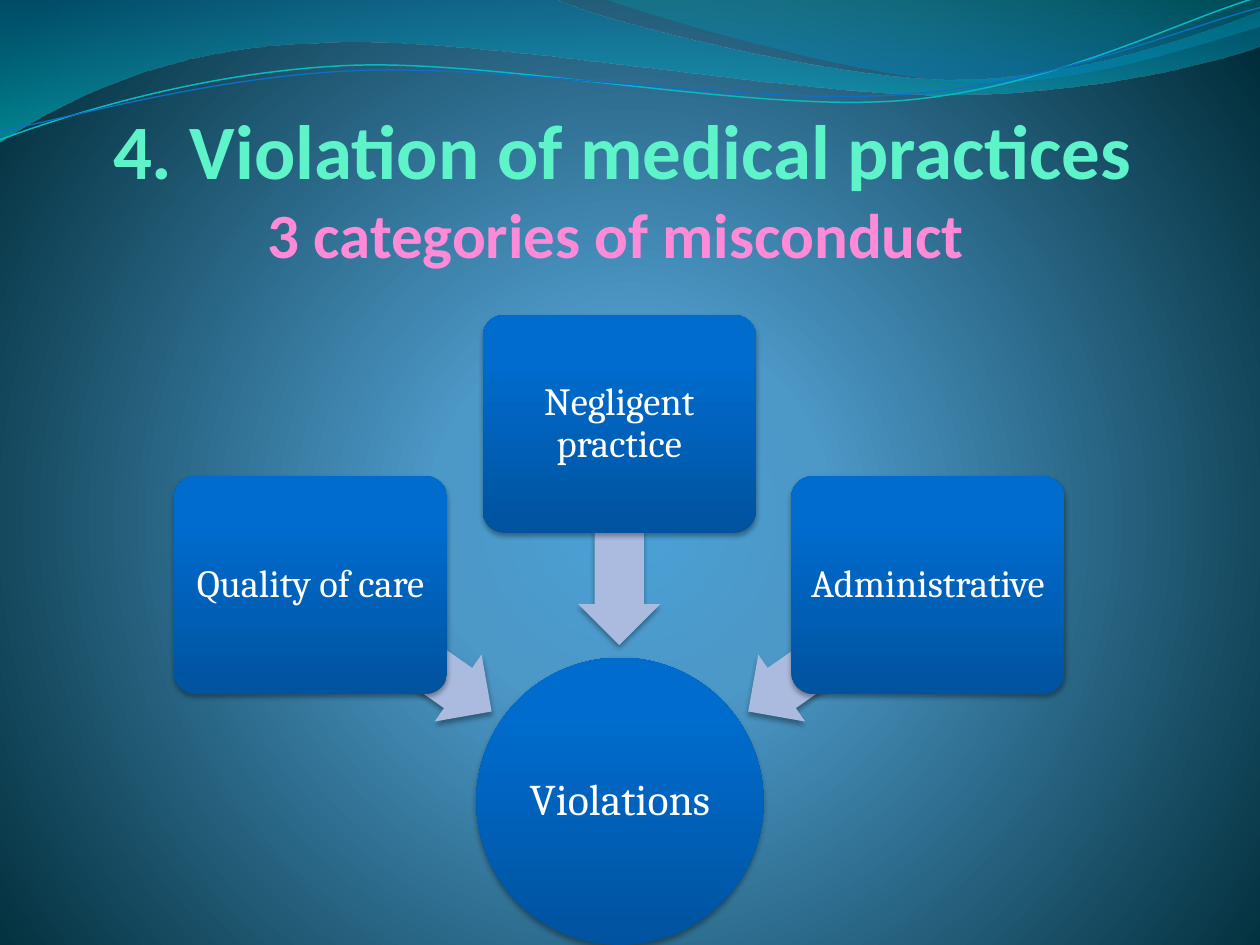
import math

import pptx
import pptx.util
import pptx.dml.color
import pptx.enum.shapes
import pptx.enum.text
import pptx.oxml
import pptx.oxml.ns

Inch = pptx.util.Inches
Pt = pptx.util.Pt
Kind = pptx.enum.shapes.MSO_SHAPE
Align = pptx.enum.text.PP_ALIGN
Anchor = pptx.enum.text.MSO_ANCHOR
qn = pptx.oxml.ns.qn
NS = pptx.oxml.ns.nsdecls("a")

WIDE, HIGH = 10, 7.5
TILT = 357.3
BLUE = [(0, "00539F", 100), (80, "006CCE", 100), (100, "006DCF", 100)]
UP, DOWN = ('<a:lin ang="%d" scaled="0"/>' % (deg * 60000) for deg in (270, 90))
GLOW = ('<a:path path="circle"><a:fillToRect l="10000" t="110000" '
        'r="10000" b="100000"/></a:path>')

# Each wave: start point, then cubic (6 numbers) or straight (2 numbers) steps
BAND = [(0, 0), (4.4, -0.01), (4.76, 0.17, 6.64, 0.63, 7.58, 0.63),
        (8.53, 0.63, 9.58, 0.26, 10, 0.09), (10.01, 0.36),
        (9.83, 0.44, 8.7, 0.76, 7.46, 0.75), (6.22, 0.75, 3.82, 0.28, 2.57, 0.34),
        (1.29, 0.36, 0.46, 0.83, -0.01, 1.13), (0, 0)]
CREST = [(4.79, -0.01), (5.09, 0.11, 6.82, 0.62, 7.69, 0.65),
         (8.56, 0.69, 9.61, 0.32, 10, 0.21), (10, 0), (4.79, -0.01)]
TEAL = [(0, 1.11), (0.48, 0.93, 1.58, 0.57, 2.77, 0.52),
        (3.95, 0.47, 5.93, 0.89, 7.13, 0.8), (8.33, 0.71, 9.38, 0.15, 9.98, -0.02)]
AZURE = [(0, 1.04), (0.47, 0.96, 1.64, 0.61, 2.83, 0.56),
         (4.03, 0.51, 5.97, 0.84, 7.17, 0.75), (8.36, 0.67, 9.41, 0.21, 10, 0.06)]


def color(text):
    return pptx.dml.color.RGBColor.from_string(text)


def place(shape, box):
    shape.left, shape.top, shape.width, shape.height = map(Inch, box)


def blend(fill, root, stops, way):
    """Give the first gradient under root these (place, colour, opacity) stops."""
    fill.gradient()
    grad = root.find(".//" + qn("a:gradFill"))
    for child in list(grad):
        grad.remove(child)
    marks = "".join(
        f'<a:gs pos="{pos * 1000}"><a:srgbClr val="{tone}">'
        f'<a:alpha val="{alpha * 1000}"/></a:srgbClr></a:gs>'
        for pos, tone, alpha in stops)
    grad.append(pptx.oxml.parse_xml(f"<a:gsLst {NS}>{marks}</a:gsLst>"))
    grad.append(pptx.oxml.parse_xml(way.replace(" ", f" {NS} ", 1)))


def shade(shape):
    shape.shadow.inherit = False
    shape.element.spPr.find(qn("a:effectLst")).append(pptx.oxml.parse_xml(
        f'<a:outerShdw {NS} blurRad="{Pt(3.1)}" dist="{Pt(1.8)}" dir="5400000" '
        'rotWithShape="0"><a:srgbClr val="000000"><a:alpha val="35000"/>'
        '</a:srgbClr></a:outerShdw>'))


def local(x, y, box, turn):
    """Undo the turn about the box's middle and measure from its corner."""
    left, top, width, height = box
    rad = math.radians(-turn)
    dx, dy = x - left - width / 2, y - top - height / 2
    return (Inch(dx * math.cos(rad) - dy * math.sin(rad) + width / 2),
            Inch(dx * math.sin(rad) + dy * math.cos(rad) + height / 2))


def wave(slide, steps, box, closed, turn=0):
    """Build a freeform, then bend its segments into cubic curves."""
    ends = [(Inch(step[-2]), Inch(step[-1])) for step in steps]
    pen = slide.shapes.build_freeform(*ends[0])
    pen.add_line_segments(ends[1:], close=closed)
    shape = pen.convert_to_shape()
    place(shape, box)
    shape.rotation = turn
    shape.shadow.inherit = False
    track = shape.element.find(".//" + qn("a:path"))
    track.set("w", str(shape.width))
    track.set("h", str(shape.height))
    for child in list(track):
        track.remove(child)
    for i, step in enumerate(steps):
        tag = "moveTo" if i == 0 else "lnTo" if len(step) == 2 else "cubicBezTo"
        spots = [local(x, y, box, turn) for x, y in zip(step[::2], step[1::2])]
        marks = "".join(f'<a:pt x="{x}" y="{y}"/>' for x, y in spots)
        track.append(pptx.oxml.parse_xml(f"<a:{tag} {NS}>{marks}</a:{tag}>"))
    if closed:
        track.append(pptx.oxml.parse_xml(f"<a:close {NS}/>"))
    return shape


def sheet(slide, steps, box, stops):
    shape = wave(slide, steps, box, True)
    blend(shape.fill, shape.element, stops, DOWN)
    shape.line.fill.background()


def thread(slide, steps, box, tone, width):
    shape = wave(slide, steps, box, False, TILT)
    shape.fill.background()
    shape.line.color.rgb = color(tone)
    shape.line.width = Pt(width)


def write(para, text, size, face, tone, bold=False):
    run = para.add_run()
    run.text = text
    run.font.size, run.font.name, run.font.bold = Pt(size), face, bold
    run.font.color.rgb = color(tone)


def pad(frame, *sides):
    (frame.margin_left, frame.margin_top,
     frame.margin_right, frame.margin_bottom) = map(Inch, sides)


def head(slide):
    title = slide.shapes.title
    place(title, (0.33, 0.58, 9.25, 2.5))
    frame = title.text_frame
    frame.auto_size = pptx.enum.text.MSO_AUTO_SIZE.NONE
    frame.vertical_anchor = Anchor.BOTTOM
    pad(frame, 0, 0, 0.02, 0.93)
    para = frame.paragraphs[0]
    para.alignment = Align.CENTER
    write(para, "4. Violation of medical practices", 44, "Calibri", "5FF3CA", True)
    para.add_line_break()
    write(para, "3 categories of misconduct ", 36, "Calibri", "FF8AD8", True)


def node(slide, kind, box, text, size, inset):
    shape = slide.shapes.add_shape(kind, *map(Inch, box))
    if kind == Kind.ROUNDED_RECTANGLE:
        shape.adjustments[0] = 0.1
    blend(shape.fill, shape.element, BLUE, UP)
    shape.line.fill.background()
    shade(shape)
    frame = shape.text_frame
    frame.word_wrap = True
    frame.vertical_anchor = Anchor.MIDDLE
    pad(frame, *[inset] * 4)
    para = frame.paragraphs[0]
    para.alignment = Align.CENTER
    para.line_spacing = 0.9
    write(para, text, size, "Cambria", "FFFFFF")


def arrow(slide, left, top, turn):
    shape = slide.shapes.add_shape(
        Kind.LEFT_ARROW, *map(Inch, (left, top, 1.75, 0.65)))
    shape.adjustments[0], shape.adjustments[1] = 0.6, 0.5
    shape.rotation = turn
    shape.fill.solid()
    shape.fill.fore_color.rgb = color("ABBBDF")
    shape.line.fill.background()
    shade(shape)


def main():
    deck = pptx.Presentation()
    deck.slide_width, deck.slide_height = Inch(WIDE), Inch(HIGH)
    slide = deck.slides.add_slide(deck.slide_layouts[0])
    sub = slide.placeholders[1].element
    sub.getparent().remove(sub)

    blend(slide.background.fill, slide.element,
          [(0, "4AA0D6", 100), (25, "4C98C7", 100), (100, "002C38", 100)], GLOW)
    sheet(slide, BAND, (-0.01, -0.01, 10.02, 1.14),
          [(0, "0074A1", 45), (100, "00C6CF", 55)])
    sheet(slide, CREST, (4.79, -0.01, 5.21, 0.7),
          [(0, "00A1A9", 30), (80, "008BBF", 45)])
    thread(slide, TEAL, (-0.02, 0.22, 10.02, 0.71), "0AB8BF", 0.85)
    thread(slide, AZURE, (-0.02, 0.3, 10.03, 0.58), "0F6FC6", 0.75)
    head(slide)

    node(slide, Kind.OVAL, (3.78, 5.22, 2.28, 2.28), "Violations", 25, 0.02)
    causes = [("Quality of care", 3.78, 2.31, 4.82, 215),
              ("Negligent practice", 2.5, 4.04, 3.92, 270),
              ("Administrative", 3.78, 5.78, 4.82, 325)]
    for i, (text, top, left, high, turn) in enumerate(causes):
        arrow(slide, left, high, turn)
        node(slide, Kind.ROUNDED_RECTANGLE, (1.38 + 2.45 * i, top, 2.17, 1.73),
             text, 22, 0.05)
    deck.save("out.pptx")


if __name__ == "__main__":
    main()
